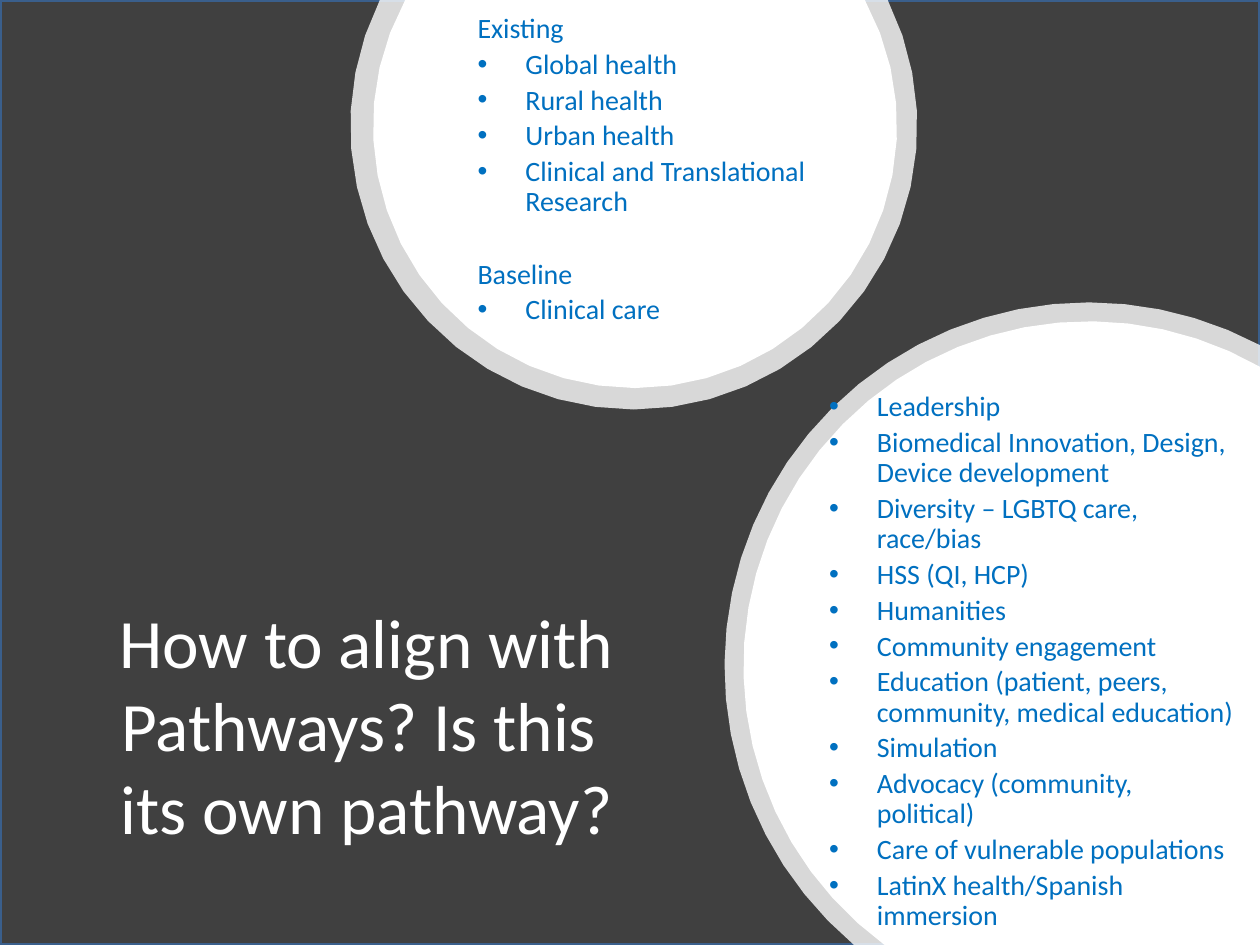
import math
from lxml import etree
from pptx import Presentation
from pptx.dml.color import RGBColor
from pptx.enum import shapes, text
from pptx.oxml.ns import qn
from pptx.util import Inches, Pt

COLORS = {"back": "404040", "edge": "3A5F8C", "white": "FFFFFF", "list": "0070C0"}
FONT = "Calibri"
WIDTH, HEIGHT = 10, 7.5
ARC_STEPS = 30


def rgb(name):
    return RGBColor.from_string(COLORS[name])


def format_paragraph(p, size, color, **formats):
    values = {"name": FONT, "size": Pt(size), "bold": False}
    for key, value in values.items():
        setattr(p.runs[0].font, key, value)
    p.runs[0].font.color.rgb = rgb(color)
    for key, value in formats.items():
        setattr(p, key, value)


prs = Presentation()
prs.slide_width, prs.slide_height = Inches(WIDTH), Inches(HEIGHT)
s = prs.slides.add_slide(prs.slide_layouts[3])
title, *bodies = list(s.placeholders)

# Dark background
back = s.shapes.add_shape(shapes.MSO_SHAPE.RECTANGLE, 0, 0, prs.slide_width, prs.slide_height)
back.shadow.inherit = False
back.fill.solid()
back.fill.fore_color.rgb = rgb("back")
back.line.color.rgb = rgb("edge")
back.line.width = Pt(2)

# Circles cut off at the slide edge: centre x, centre y, radius, opacity in percent
circles = [
    (8.64, 5.29, 2.89, 80),
    (8.64, 5.29, 2.74, 100),
    (5.03, 1, 2.25, 80),
    (5.04, 1, 2.08, 100),
]
for cx, cy, radius, opacity in circles:
    if cx + radius > WIDTH:  # from the bottom edge round to the right edge
        start = math.pi - math.asin((HEIGHT - cy) / radius)
        end = 2 * math.pi - math.acos((WIDTH - cx) / radius)
        corners = [(Inches(WIDTH), Inches(HEIGHT))]
    else:  # from the top edge round to the top edge
        start = -math.asin(cy / radius)
        end = math.pi - start
        corners = []
    angles = [start + (end - start) * i / ARC_STEPS for i in range(ARC_STEPS + 1)]
    points = [(Inches(cx + radius * math.cos(a)), Inches(cy + radius * math.sin(a)))
              for a in angles] + corners
    builder = s.shapes.build_freeform(*points[0])
    builder.add_line_segments(points[1:], close=True)
    circle = builder.convert_to_shape()
    circle.shadow.inherit = False
    circle.line.fill.background()
    circle.fill.solid()
    circle.fill.fore_color.rgb = rgb("white")
    if opacity < 100:
        color = circle.element.spPr.find(qn("a:solidFill"))[0]
        etree.SubElement(color, qn("a:alpha")).set("val", str(opacity * 1000))

# Text placeholders, in front of the circles
places = [
    (title, 0.76, 4.25, 4.3, 2.99),
    (bodies[0], 3.69, 0.28, 3.1, 2.57),
    (bodies[1], 6.48, 3.27, 3.43, 3.97),
]
for sp, *place in places:
    sp.left, sp.top, sp.width, sp.height = map(Inches, place)
    sp.element.getparent().append(sp.element)
    tf = sp.text_frame
    tf.word_wrap = True
    tf.auto_size = text.MSO_AUTO_SIZE.NONE
    tf.vertical_anchor = text.MSO_ANCHOR.MIDDLE

# Title
title.text_frame.text = "How to align with Pathways? Is this  its own pathway?"
format_paragraph(title.text_frame.paragraphs[0], 39.6, "white", alignment=text.PP_ALIGN.CENTER)

# Lists
headings = {"Existing": 3.2, "Baseline": 24}  # space before, in points
lists = [
    ["Existing", "Global health", "Rural health", "Urban health",
     "Clinical and Translational Research", "Baseline", "Clinical care"],
    ["Leadership", "Biomedical Innovation, Design, Device development",
     "Diversity – LGBTQ care, race/bias", "HSS (QI, HCP)", "Humanities",
     "Community engagement", "Education (patient, peers, community, medical education)",
     "Simulation", "Advocacy (community, political)",
     "Care of vulnerable populations", "LatinX health/Spanish immersion"],
]
bodies[0].text_frame.margin_bottom = Inches(0.48)
for body, lines in zip(bodies, lists):
    tf = body.text_frame
    tf.text = "\n".join(lines)
    for p, line in zip(tf.paragraphs, lines):
        format_paragraph(p, 16, "list", line_spacing=0.9,
                         space_before=Pt(headings.get(line, 3.2)))
        pPr = p._p.get_or_add_pPr()
        indent = 0 if line in headings else Inches(0.38)
        pPr.set("marL", str(indent))
        pPr.set("indent", str(-indent))
        if line in headings:
            etree.SubElement(pPr, qn("a:buNone"))
        else:
            etree.SubElement(pPr, qn("a:buFont")).set("typeface", "Arial")
            etree.SubElement(pPr, qn("a:buChar")).set("char", "•")

prs.save("out.pptx")
